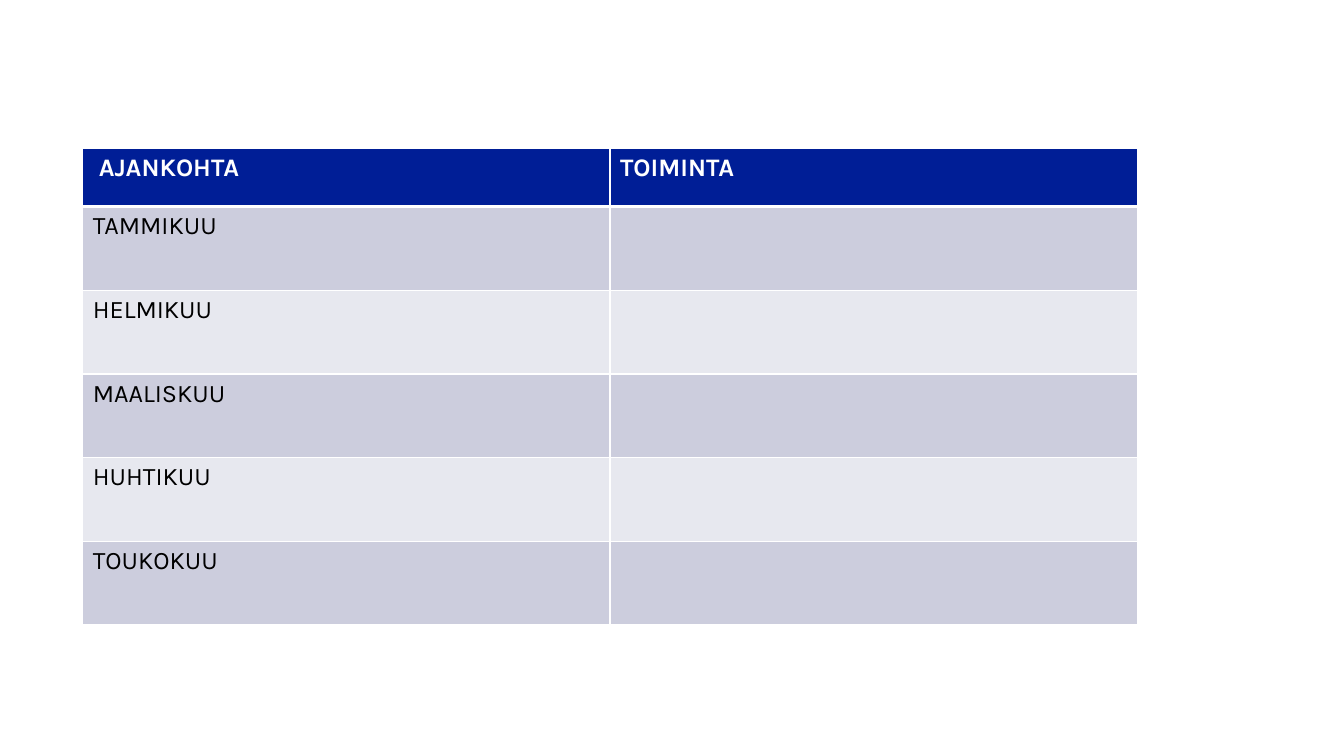
from lxml import etree
from pptx import Presentation
from pptx import util as u
from pptx.dml.color import RGBColor
from pptx.oxml.ns import qn


def color(value):
    return RGBColor.from_string(value)


def add_border(cell, side, points):
    properties = cell._tc.get_or_add_tcPr()
    line = etree.SubElement(properties, qn("a:ln" + side), w=str(u.Pt(points)))
    fill = etree.SubElement(line, qn("a:solidFill"))
    etree.SubElement(fill, qn("a:srgbClr"), val="FFFFFF")


presentation = Presentation()
presentation.slide_width = u.Inches(13.33)
presentation.slide_height = u.Inches(7.5)
slide = presentation.slides.add_slide(presentation.slide_layouts[6])

headings = ["AJANKOHTA", "TOIMINTA"]
months = ["TAMMIKUU", "HELMIKUU", "MAALISKUU", "HUHTIKUU", "TOUKOKUU"]
rows = [headings] + [[month, ""] for month in months]

column_width = u.Inches(5.23)
header_height = u.Inches(0.58)
month_height = u.Inches(0.83)

schedule = slide.shapes.add_table(
    len(rows), len(headings), u.Inches(0.82), u.Inches(1.47),
    column_width * len(headings), header_height + month_height * len(months),
).table

for column in schedule.columns:
    column.width = column_width

for row_index, labels in enumerate(rows):
    is_header = row_index == 0
    schedule.rows[row_index].height = header_height if is_header else month_height
    band = "001E96" if is_header else ("E7E8EF", "CCCDDD")[row_index % 2]
    for column_index, label in enumerate(labels):
        cell = schedule.cell(row_index, column_index)
        add_border(cell, "L", 1)
        add_border(cell, "R", 1)
        add_border(cell, "T", 3 if row_index == 1 else 1)
        add_border(cell, "B", 3 if is_header else 1)
        cell.fill.solid()
        cell.fill.fore_color.rgb = color(band)
        cell.text = label
        font = cell.text_frame.paragraphs[0].font
        font.name = "Karla"
        font.size = u.Pt(18)
        font.bold = is_header
        font.color.rgb = color("FFFFFF" if is_header else "000000")

schedule.cell(0, 0).margin_left = u.Inches(0.16)

presentation.save("out.pptx")
